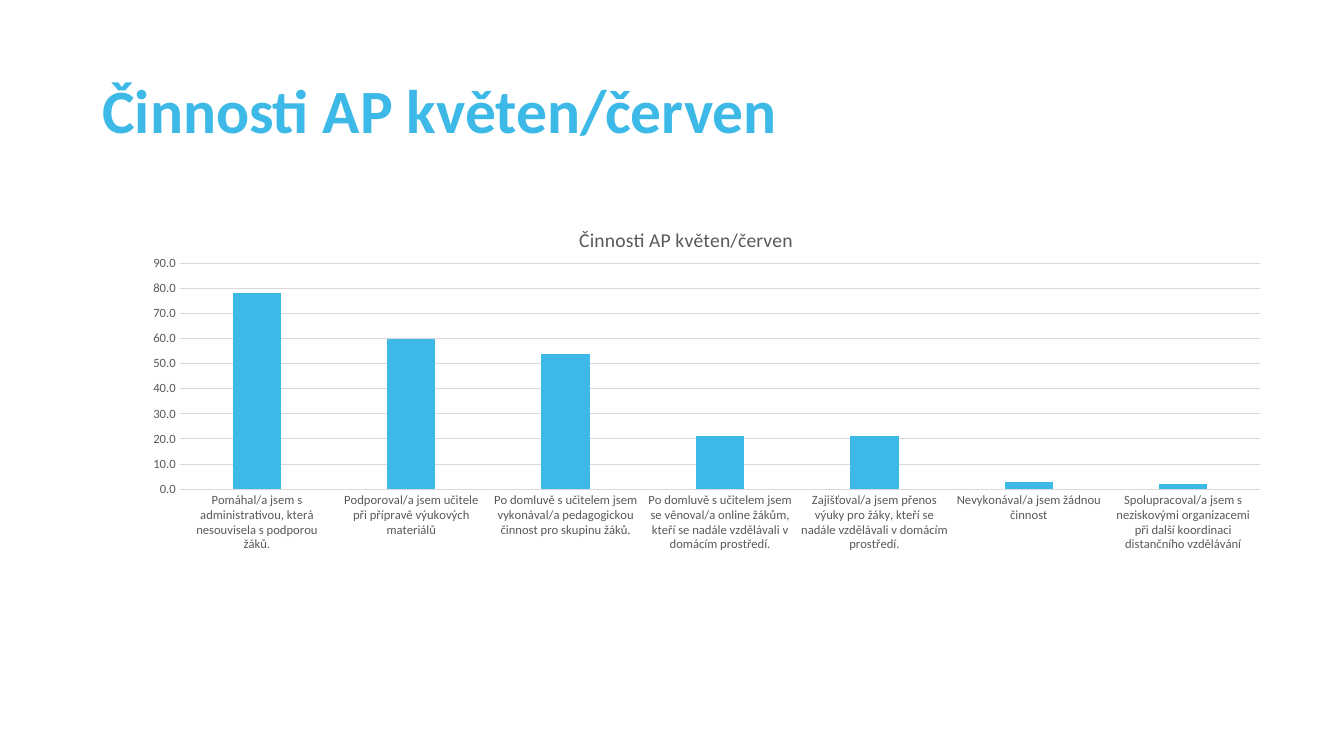
"""Build a slide with a title and a column chart of assistant activities."""
from lxml.etree import SubElement
from pptx import Presentation
from pptx.chart.data import CategoryChartData
from pptx.dml.color import RGBColor
from pptx.enum.chart import XL_CHART_TYPE, XL_TICK_MARK
from pptx.enum.text import MSO_ANCHOR
from pptx.oxml.ns import qn
from pptx.util import Cm, Pt


def color(code):
    return RGBColor.from_string(code)


def place(parent, **values):
    layout = parent.find(qn("c:layout"))
    if layout is None:
        layout = SubElement(parent, qn("c:layout"))
        parent.remove(layout)
        parent.insert(1 if parent.tag == qn("c:title") else 0, layout)
    manual = SubElement(layout, qn("c:manualLayout"))
    for name, value in values.items():
        SubElement(manual, qn(f"c:{name}")).set("val", str(value))


FONT = "Calibri"
BLUE, GREY, PALE = "3CB9E6", "595959", "D9D9D9"
TITLE = "Činnosti AP květen/červen"
ACTS = {
    "Pomáhal/a jsem s administrativou, která nesouvisela s podporou žáků.": 78,
    "Podporoval/a jsem učitele při přípravě výukových materiálů": 60,
    "Po domluvě s učitelem jsem vykonával/a pedagogickou činnost pro skupinu žáků.": 54,
    "Po domluvě s učitelem jsem se věnoval/a online žákům, "
    "kteří se nadále vzdělávali v domácím prostředí.": 21,
    "Zajišťoval/a jsem přenos výuky pro žáky, "
    "kteří se nadále vzdělávali v domácím prostředí.": 21,
    "Nevykonával/a jsem žádnou činnost": 3,
    "Spolupracoval/a jsem s neziskovými organizacemi "
    "při další koordinaci distančního vzdělávání": 2,
}

deck = Presentation()
deck.slide_width, deck.slide_height = Cm(33.87), Cm(19.05)
slide = deck.slides.add_slide(deck.slide_layouts[6])

box = slide.shapes.add_textbox(Cm(2.33), Cm(1.01), Cm(29.21), Cm(3.68))
frame = box.text_frame
frame.word_wrap = True
frame.vertical_anchor = MSO_ANCHOR.MIDDLE
head = frame.paragraphs[0]
head.text = TITLE
head.line_spacing = 0.9
head.font.name, head.font.size, head.font.bold = FONT, Pt(44), True
head.font.color.rgb = color(BLUE)

data = CategoryChartData(number_format="0.0")
data.categories = list(ACTS)
data.add_series("Series 1", list(ACTS.values()))
chart = slide.shapes.add_chart(
    XL_CHART_TYPE.COLUMN_CLUSTERED, Cm(2.33), Cm(5.08), Cm(29.7), Cm(13.18), data
).chart
chart.has_legend = False
chart.font.name, chart.font.size = FONT, Pt(10)

label = chart.chart_title.text_frame.paragraphs[0]
label.text = TITLE
label.font.name, label.font.size, label.font.bold = FONT, Pt(14), False
label.font.color.rgb = color(GREY)
place(chart.chart_title._element, xMode="edge", yMode="edge", x=0.41, y=0.04)

plot = chart.plots[0]
plot.gap_width, plot.overlap, plot.vary_by_categories = 219, -27, False
fill = plot.series[0].format.fill
fill.solid()
fill.fore_color.rgb = color(BLUE)
place(
    chart._chartSpace.chart.plotArea,
    layoutTarget="inner", xMode="edge", yMode="edge",
    x=0.074, y=0.118, w=0.917, h=0.432,
)

cats, vals = chart.category_axis, chart.value_axis
for axis in (cats, vals):
    axis.major_tick_mark = axis.minor_tick_mark = XL_TICK_MARK.NONE
    font = axis.tick_labels.font
    font.name, font.size = FONT, Pt(9)
    font.color.rgb = color(GREY)
vals.minimum_scale, vals.maximum_scale, vals.major_unit = 0, 90, 10
vals.tick_labels.number_format = "0.0"
vals.tick_labels.number_format_is_linked = False
vals.format.line.fill.background()
for line in (cats.format.line, vals.major_gridlines.format.line):
    line.color.rgb = color(PALE)
    line.width = Pt(0.75)

deck.save("out.pptx")
